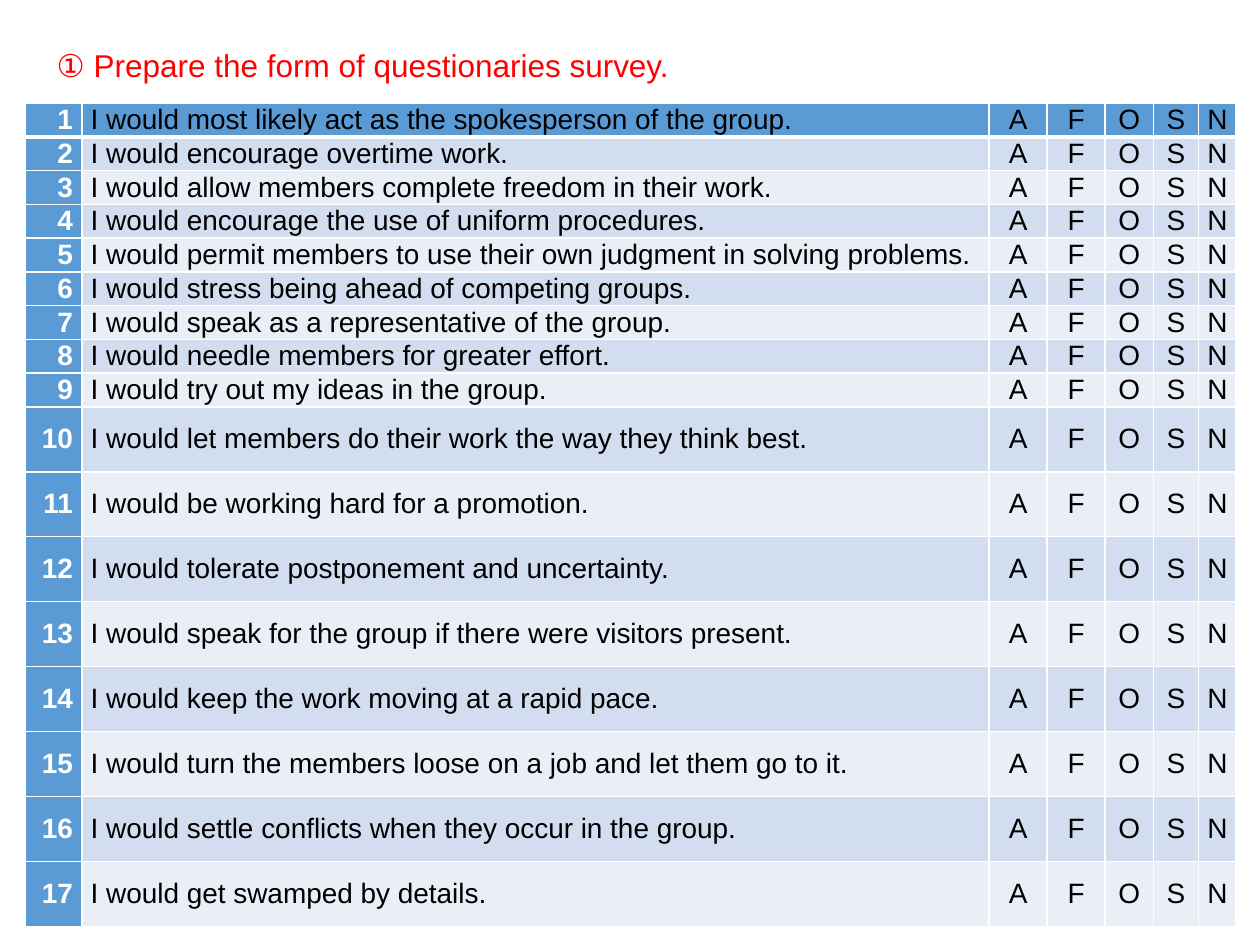
import lxml.etree
import pptx
import pptx.dml.color
import pptx.enum.text
import pptx.oxml.ns
import pptx.util

Cm = pptx.util.Cm
Pt = pptx.util.Pt
ALIGN = pptx.enum.text.PP_ALIGN
ANCHOR = pptx.enum.text.MSO_ANCHOR

COLOURS = {
    "title": "FF0000",
    "text": "000000",
    "white": "FFFFFF",
    "header": "5B9BD5",
    "dark band": "D2DEEF",
    "light band": "EAEFF7",
}

STATEMENTS = [
    "I would most likely act as the spokesperson of the group.",
    "I would encourage overtime work.",
    "I would allow members complete freedom in their work.",
    "I would encourage the use of uniform procedures.",
    "I would permit members to use their own judgment in solving problems.",
    "I would stress being ahead of competing groups.",
    "I would speak as a representative of the group.",
    "I would needle members for greater effort.",
    "I would try out my ideas in the group.",
    "I would let members do their work the way they think best.",
    "I would be working hard for a promotion.",
    "I would tolerate postponement and uncertainty.",
    "I would speak for the group if there were visitors present.",
    "I would keep the work moving at a rapid pace.",
    "I would turn the members loose on a job and let them go to it.",
    "I would settle conflicts when they occur in the group.",
    "I would get swamped by details.",
]
ANSWERS = list("AFOSN")
COLUMN_WIDTHS = [1.14, 18.29, 1.17, 1.17, 0.97, 0.91, 0.76]
SHORT_ROWS = 9
SHORT_HEIGHT, TALL_HEIGHT = 0.68, 1.31


class SurveyPage:
    """Holds the style and the current slide."""

    font = "Arial"

    def __init__(self, page):
        self.page = page

    def colour(self, name):
        return pptx.dml.color.RGBColor.from_string(COLOURS[name])

    def format_text(self, frame, size, colour, align, bold=False):
        for para in frame.paragraphs:
            para.alignment = align
            for span in para.runs:
                span.font.name = self.font
                span.font.size = Pt(size)
                span.font.bold = bold
                span.font.color.rgb = self.colour(colour)

    def title(self, text, left, top, width, height):
        box = self.page.shapes.title
        box.left, box.top = Cm(left), Cm(top)
        box.width, box.height = Cm(width), Cm(height)
        frame = box.text_frame
        frame.text = text
        frame.word_wrap = True
        frame.auto_size = pptx.enum.text.MSO_AUTO_SIZE.SHAPE_TO_FIT_TEXT
        frame.vertical_anchor = ANCHOR.TOP
        self.format_text(frame, 18, "title", ALIGN.LEFT)

    def borders(self, cell, top, bottom):
        """Draw white cell edges; the lines must come before the fill."""
        properties = cell._tc.get_or_add_tcPr()
        widths = {"lnL": 1, "lnR": 1, "lnT": top, "lnB": bottom}
        for position, (tag, width) in enumerate(widths.items()):
            line = lxml.etree.Element(pptx.oxml.ns.qn("a:" + tag), w=str(Pt(width)))
            fill = lxml.etree.SubElement(line, pptx.oxml.ns.qn("a:solidFill"))
            lxml.etree.SubElement(fill, pptx.oxml.ns.qn("a:srgbClr"), val=COLOURS["white"])
            properties.insert(position, line)

    def cell(self, cell, text, fill, colour, align, bold):
        cell.text = text
        cell.vertical_anchor = ANCHOR.MIDDLE
        cell.margin_left = cell.margin_right = Cm(0.18)
        cell.margin_top = cell.margin_bottom = 0
        cell.fill.solid()
        cell.fill.fore_color.rgb = self.colour(fill)
        self.format_text(cell.text_frame, 16, colour, align, bold)

    def survey_table(self, left, top):
        heights = [SHORT_HEIGHT if row < SHORT_ROWS else TALL_HEIGHT
                   for row in range(len(STATEMENTS))]
        table = self.page.shapes.add_table(
            len(heights), len(COLUMN_WIDTHS), Cm(left), Cm(top),
            Cm(sum(COLUMN_WIDTHS)), Cm(sum(heights))).table
        table.first_col = True
        for column, width in zip(table.columns, COLUMN_WIDTHS):
            column.width = Cm(width)

        for row, statement in enumerate(STATEMENTS):
            table.rows[row].height = Cm(heights[row])
            band = "header" if row == 0 else "dark band" if row % 2 else "light band"
            for column, text in enumerate([str(row + 1), statement] + ANSWERS):
                number = column == 0
                align = (ALIGN.RIGHT, ALIGN.LEFT)[column] if column < 2 else ALIGN.CENTER
                cell = table.cell(row, column)
                self.cell(cell, text, "header" if number else band,
                          "white" if number else "text", align, number)
                # A thicker rule separates the first row from the rest
                self.borders(cell, top=3 if row == 1 else 1, bottom=3 if row == 0 else 1)


def main():
    deck = pptx.Presentation()
    deck.slide_width, deck.slide_height = Cm(25.4), Cm(19.05)
    survey = SurveyPage(deck.slides.add_slide(deck.slide_layouts[5]))

    # Heading
    survey.title("① Prepare the form of questionaries survey.", 0.89, 0.81, 18.11, 1.02)

    # Questionnaire
    survey.survey_table(0.51, 2.08)

    deck.save("out.pptx")


if __name__ == "__main__":
    main()
